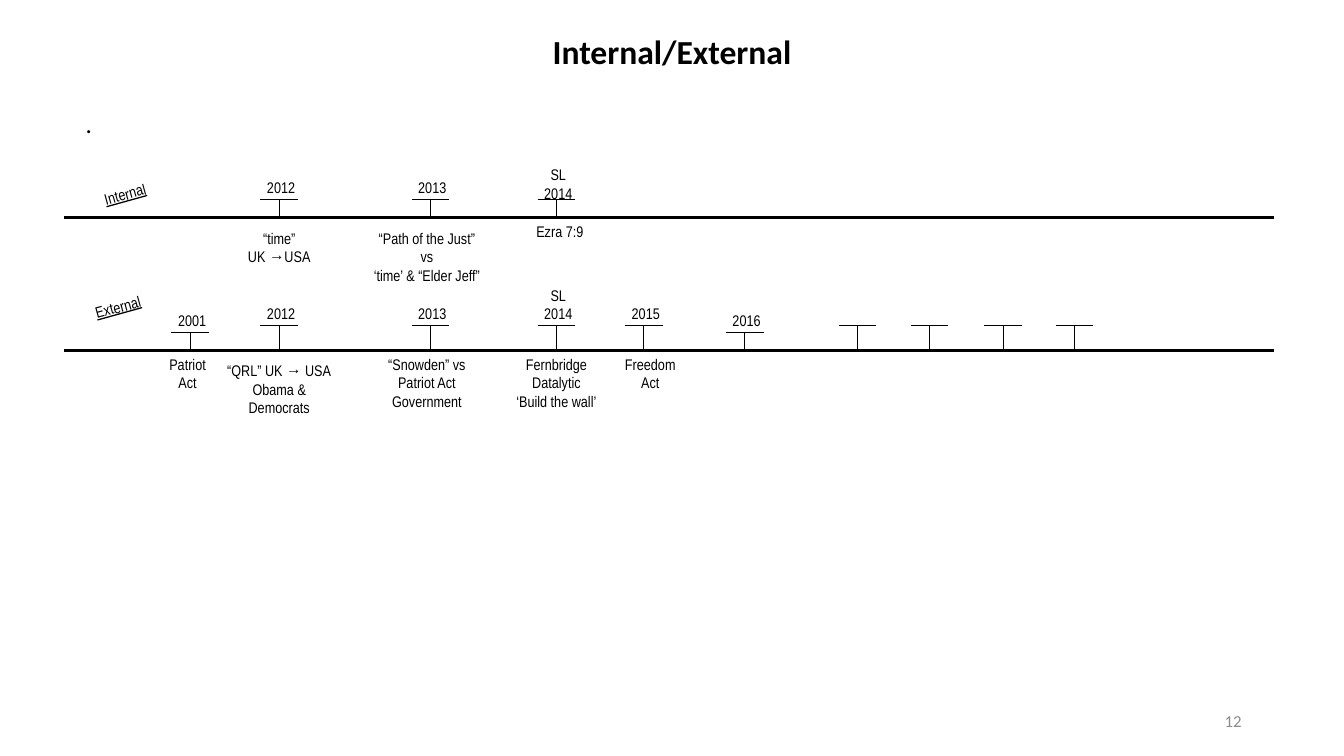
from lxml import etree
from pptx import Presentation
from pptx import util as u
from pptx.dml.color import RGBColor
from pptx.enum import shapes, text
from pptx.oxml.ns import qn

COLORS = {"ink": "000000", "number": "8C8C8C"}
TITLE = "Internal/External"
BODY = "."
PAGE = "12"
AXIS = (46, 910)
CAP_WIDTH, YEAR_WIDTH = 27, 29.5

# fields: x, stem height, year, year lift, note, note x, note width, note drop
TIMELINES = [
    {"label": "Internal", "label_at": (51, 129), "axis_y": 155.5, "events": [
        (199.5, 13, "2012", 18, "“time”\nUK →USA", 199.5, 80.5, 5),
        (307.5, 13, "2013", 18, "“Path of the Just” vs\n‘time’ & “Elder Jeff”", 305, 85.5, 5),
        (397.5, 13, "SL\n2014", 27.5, "Ezra 7:9", 400, 49.5, 0),
    ]},
    {"label": "External", "label_at": (46, 209.5), "axis_y": 250.5, "events": [
        (136, 13.5, "2001", 18, "Patriot Act", 134, 40, 0),
        (199.5, 18, "2012", 18, "“QRL” UK → USA\nObama &\nDemocrats", 199.5, 80.5, 4.5),
        (307.5, 18, "2013", 18, "“Snowden” vs\nPatriot Act\nGovernment", 305, 85.5, 0),
        (397.5, 18, "SL\n2014", 31.5, "Fernbridge\nDatalytic\n‘Build the wall’", 397.5, 72, 0),
        (460, 18, "2015", 18, "Freedom Act", 464.5, 54, 0),
        (532, 13.5, "2016", 18, "", 0, 0, 0),
        (612.5, 18, "", 0, "", 0, 0, 0),
        (664, 18, "", 0, "", 0, 0, 0),
        (716.5, 18, "", 0, "", 0, 0, 0),
        (767.5, 18, "", 0, "", 0, 0, 0),
    ]},
]


def place(shape, left, top, width, height):
    shape.left, shape.top = u.Pt(left), u.Pt(top)
    shape.width, shape.height = u.Pt(width), u.Pt(height)


def write(shape, words, size, font="Calibri", color="ink", align=text.PP_ALIGN.CENTER,
          anchor=text.MSO_ANCHOR.TOP, bold=False, underline=False, inset=None):
    frame = shape.text_frame
    frame.text = words
    frame.word_wrap = True
    frame.auto_size = text.MSO_AUTO_SIZE.NONE
    frame.vertical_anchor = anchor
    if inset is not None:
        frame.margin_left = frame.margin_right = u.Pt(inset)
        frame.margin_top = frame.margin_bottom = u.Pt(inset)
    for paragraph in frame.paragraphs:
        paragraph.alignment = align
        for run in paragraph.runs:
            run.font.size = u.Pt(size)
            run.font.name = font
            run.font.bold = bold
            run.font.underline = underline
            run.font.color.rgb = RGBColor.from_string(COLORS[color])


def add_caption(slide, words, left, top, width, height, underline=False):
    caption = slide.shapes.add_textbox(u.Pt(left), u.Pt(top), u.Pt(width), u.Pt(height))
    write(caption, words, 11, "Arial Narrow", underline=underline, inset=3)
    return caption


def add_line(slide, x1, y1, x2, y2, weight):
    line = slide.shapes.add_connector(
        shapes.MSO_CONNECTOR.STRAIGHT, u.Pt(x1), u.Pt(y1), u.Pt(x2), u.Pt(y2))
    line.line.width = u.Pt(weight)
    line.line.color.rgb = RGBColor.from_string(COLORS["ink"])
    etree.SubElement(line._element.spPr, qn("a:effectLst"))


def add_event(slide, axis_y, x, stem, year, lift, note, note_x, note_width, drop):
    cap_y = axis_y - stem
    cap_left = x - CAP_WIDTH / 2
    add_line(slide, x, cap_y, x, axis_y, 0.75)
    add_line(slide, cap_left, cap_y, cap_left + CAP_WIDTH, cap_y, 0.25)
    if year:
        add_caption(slide, year, cap_left, cap_y - lift, YEAR_WIDTH, lift)
    if note:
        height = 50 if "\n" in note else 31.5
        add_caption(slide, note, note_x - note_width / 2, axis_y + drop, note_width, height)


def main():
    deck = Presentation()
    deck.slide_width, deck.slide_height = u.Pt(960), u.Pt(540)
    slide = deck.slides.add_slide(deck.slide_layouts[1])

    title, body = slide.placeholders
    place(title, 0, 18.5, 960, 40)
    write(title, TITLE, 24, bold=True, anchor=text.MSO_ANCHOR.MIDDLE)
    title.text_frame.paragraphs[0].line_spacing = 0.9

    place(body, 54, 76.5, 265.5, 432)
    write(body, BODY, 18, align=text.PP_ALIGN.LEFT)
    opening = body.text_frame.paragraphs[0]
    opening.line_spacing = 0.9
    opening.space_before = u.Pt(10)
    properties = opening._p.get_or_add_pPr()
    properties.set("marL", "0")
    properties.set("indent", "0")
    etree.SubElement(properties, qn("a:buNone"))

    page = slide.shapes.add_textbox(u.Pt(678), u.Pt(500.5), u.Pt(216), u.Pt(29))
    write(page, PAGE, 12, color="number", align=text.PP_ALIGN.RIGHT,
          anchor=text.MSO_ANCHOR.MIDDLE)

    for timeline in TIMELINES:
        axis_y = timeline["axis_y"]
        add_line(slide, AXIS[0], axis_y, AXIS[1], axis_y, 2)
        label = add_caption(slide, timeline["label"], *timeline["label_at"], 77, 21, True)
        label.rotation = 344.5
        for event in timeline["events"]:
            add_event(slide, axis_y, *event)

    deck.save("out.pptx")


if __name__ == "__main__":
    main()
